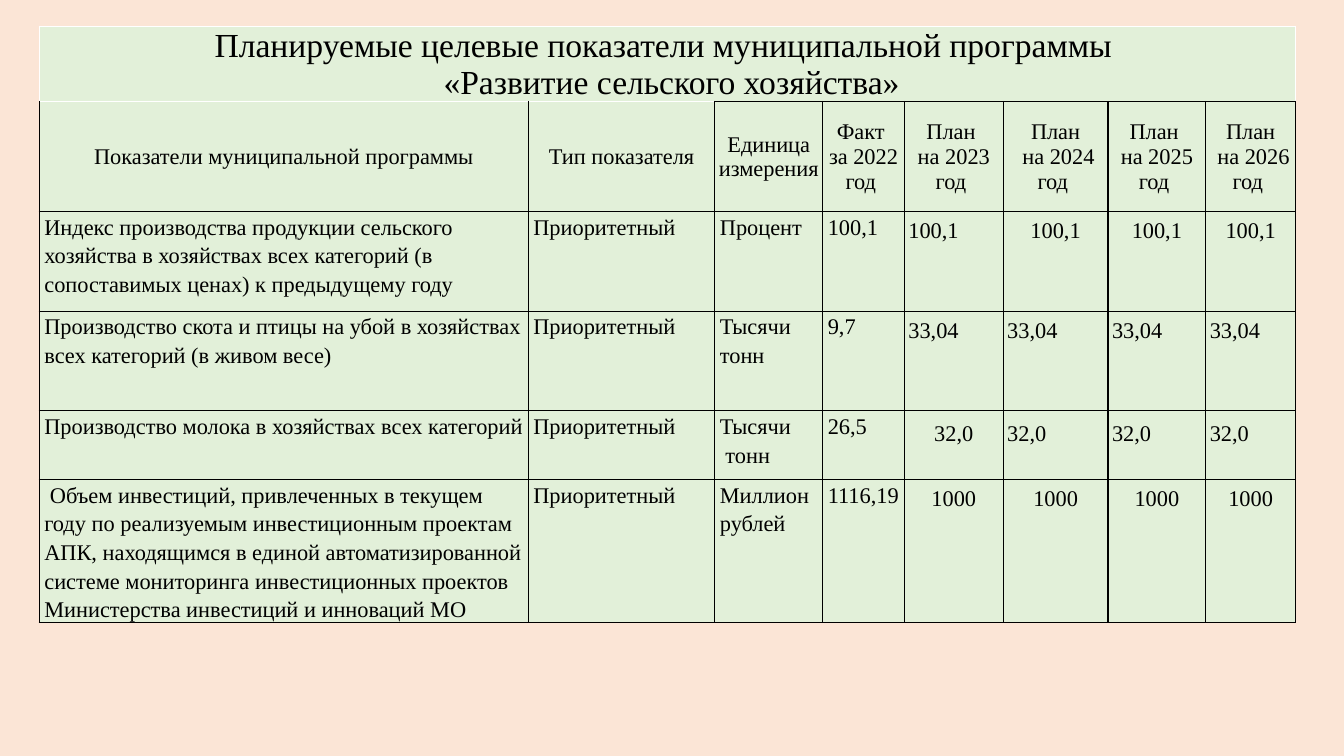
from lxml import etree
from pptx import Presentation
from pptx.dml.color import RGBColor
from pptx.enum.text import MSO_ANCHOR, PP_ALIGN
from pptx.oxml.ns import qn
from pptx.util import Inches, Pt

LEFT, MID = PP_ALIGN.LEFT, PP_ALIGN.CENTER
TOP, HALF, LOW = MSO_ANCHOR.TOP, MSO_ANCHOR.MIDDLE, MSO_ANCHOR.BOTTOM
PEACH = RGBColor(0xFB, 0xE5, 0xD6)
GREEN = RGBColor(0xE2, 0xF0, 0xD9)
BLACK = RGBColor(0, 0, 0)
WHITE = RGBColor(255, 255, 255)
FONT = "Times New Roman"

TITLE = "Планируемые целевые показатели муниципальной программы \n «Развитие сельского хозяйства»"
HEADS = ["Показатели муниципальной программы", "Тип показателя", "Единица измерения",
         "Факт \nза 2022 год ", "План \nна 2023 год ", "План\n на 2024 год ",
         "План \nна 2025 год ", "План\n на 2026 год "]
KIND = "Приоритетный"
GOALS = [
    ("Индекс производства продукции сельского хозяйства в хозяйствах всех категорий "
     "(в сопоставимых ценах) к предыдущему году", "Процент", "100,1", "100,1", "LCCC", 1),
    ("Производство скота и птицы на убой в хозяйствах всех категорий (в живом весе)",
     "Тысячи\nтонн", "9,7", "33,04", "LLLL", 1),
    ("Производство молока в хозяйствах всех категорий",
     "Тысячи\n тонн", "26,5", "32,0", "CLLL", 1.15),
    (" Объем инвестиций, привлеченных в текущем году по реализуемым инвестиционным проектам "
     "АПК, находящимся в единой автоматизированной системе мониторинга инвестиционных "
     "проектов Министерства инвестиций и инноваций МО",
     "Миллион рублей", "1116,19", "1000", "CCCC", 1),
]
COLS = [4.85, 1.85, 1.07, 0.81, 0.98, 1.04, 0.97, 0.89]
ROWS = [0.74, 1.09, 0.99, 0.99, 0.68, 1.39]
HEAD_PAD = (0.01, 0.01, 0.01, 0)
TEXT_PAD = (0.05, 0, 0.05, 0)
PLAN_PAD = (0.04, 0.07, 0.04, 0.07)


def edge(cell, tones):
    props = cell._tc.get_or_add_tcPr()
    for side, tone in zip("LRTB", tones):
        line = etree.SubElement(props, qn("a:ln" + side), w=str(Pt(1)))
        fill = etree.SubElement(line, qn("a:solidFill"))
        etree.SubElement(fill, qn("a:srgbClr"), val=str(tone))


def put(cell, text, pad, size=16, align=LEFT, anchor=TOP, space=None, tones=(BLACK,) * 4):
    edge(cell, tones)
    cell.fill.solid()
    cell.fill.fore_color.rgb = GREEN
    cell.margin_left, cell.margin_top, cell.margin_right, cell.margin_bottom = map(Inches, pad)
    cell.vertical_anchor = anchor
    cell.text_frame.text = text
    for para in cell.text_frame.paragraphs:
        para.alignment = align
        if space:
            para.line_spacing = space
        for run in para.runs:
            run.font.name = FONT
            run.font.size = Pt(size)
            run.font.color.rgb = BLACK


deck = Presentation()
deck.slide_width, deck.slide_height = Inches(13.33), Inches(7.5)
slide = deck.slides.add_slide(deck.slide_layouts[6])
slide.background.fill.solid()
slide.background.fill.fore_color.rgb = PEACH

table = slide.shapes.add_table(len(ROWS), len(COLS), Inches(0.39), Inches(0.26),
                               Inches(sum(COLS)), Inches(sum(ROWS))).table
table.first_row = table.horz_banding = False
for col, wide in zip(table.columns, COLS):
    col.width = Inches(wide)
for row, high in zip(table.rows, ROWS):
    row.height = Inches(high)

table.cell(0, 0).merge(table.cell(0, len(COLS) - 1))
put(table.cell(0, 0), TITLE, HEAD_PAD, 24, MID, LOW, tones=(WHITE,) * 4)
for c, head in enumerate(HEADS):
    top = WHITE if c < 2 else BLACK
    put(table.cell(1, c), head, HEAD_PAD, 16, MID, HALF, tones=(BLACK, BLACK, top, BLACK))

for r, (name, unit, fact, plan, signs, space) in enumerate(GOALS, 2):
    texts = (name, KIND, unit, fact)
    for c, text in enumerate(texts):
        put(table.cell(r, c), text, TEXT_PAD, space=1.15)
    for c, sign in enumerate(signs, len(texts)):
        put(table.cell(r, c), plan, PLAN_PAD, align=MID if sign == "C" else LEFT, space=space)

deck.save("out.pptx")
